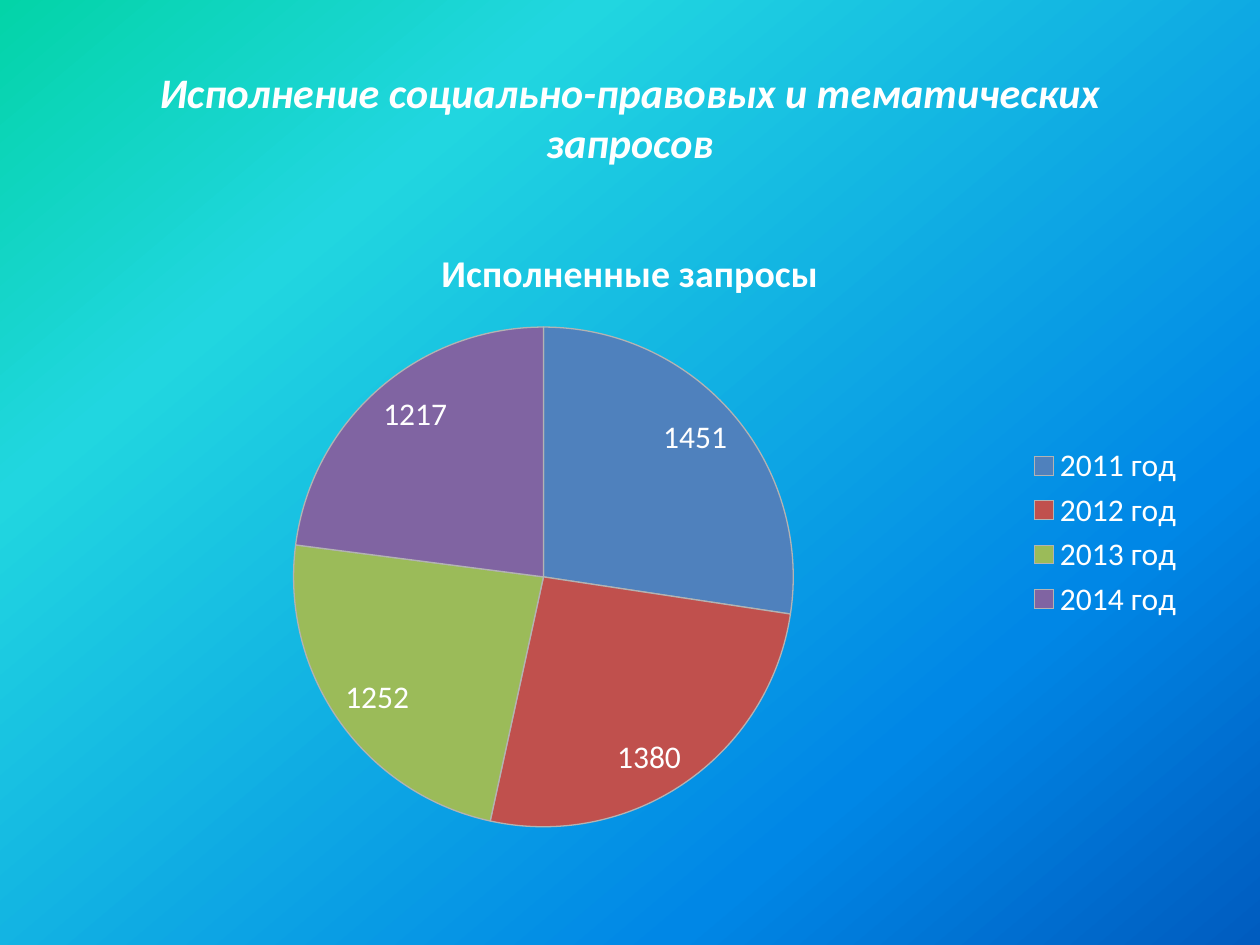
import pptx
import pptx.chart.data
import pptx.dml.color
import pptx.enum.chart
import pptx.enum.text
import pptx.oxml
import pptx.oxml.ns
import pptx.util
from pptx.util import Inches

COLORS = {
    "text": "FFFFFF",
    "outline": "B3B3B3",
    "2011 год": "4F81BD",
    "2012 год": "C0504D",
    "2013 год": "9BBB59",
    "2014 год": "8064A2",
}
BACKGROUND_STOPS = [(0, "03D4A8"), (25, "21D6E0"), (75, "0087E6"), (100, "005CBF")]
REQUESTS = {"2011 год": 1451, "2012 год": 1380, "2013 год": 1252, "2014 год": 1217}


class SlideBuilder:
    """Holds the slide style and adds each kind of element."""

    font_name = "Calibri"

    def __init__(self, slide):
        self.slide = slide

    def color(self, name):
        return pptx.dml.color.RGBColor.from_string(COLORS[name])

    def style_font(self, font, size, bold=False, italic=False):
        font.name = self.font_name
        font.size = pptx.util.Pt(size)
        font.bold = bold
        font.italic = italic
        font.color.rgb = self.color("text")

    def background(self, stops, angle):
        fill = self.slide.background.fill
        fill.gradient()
        fill.gradient_angle = 360 - angle
        stop_list = fill.gradient_stops[0]._gs.getparent()
        for old_stop in list(stop_list):
            stop_list.remove(old_stop)
        for percent, rgb in stops:
            stop_list.append(pptx.oxml.parse_xml(
                f'<a:gs {pptx.oxml.ns.nsdecls("a")} pos="{percent * 1000}">'
                f'<a:srgbClr val="{rgb}"/></a:gs>'))

    def heading(self, text, left, top, width, height):
        frame = self.slide.shapes.add_textbox(left, top, width, height).text_frame
        frame.word_wrap = True
        frame.vertical_anchor = pptx.enum.text.MSO_ANCHOR.MIDDLE
        paragraph = frame.paragraphs[0]
        paragraph.text = text
        paragraph.alignment = pptx.enum.text.PP_ALIGN.CENTER
        self.style_font(paragraph.font, 24, bold=True, italic=True)

    def pie(self, title, values, left, top, width, height):
        data = pptx.chart.data.CategoryChartData()
        data.categories = list(values)
        data.add_series(title, list(values.values()))
        chart = self.slide.shapes.add_chart(
            pptx.enum.chart.XL_CHART_TYPE.PIE, left, top, width, height, data).chart
        self.style_font(chart.font, 18)

        chart.has_title = True
        heading = chart.chart_title.text_frame.paragraphs[0]
        heading.text = title
        self.style_font(heading.font, 21.6, bold=True)

        chart.has_legend = True
        chart.legend.position = pptx.enum.chart.XL_LEGEND_POSITION.RIGHT
        chart.legend.include_in_layout = False
        self.style_font(chart.legend.font, 18)

        plot = chart.plots[0]
        plot.vary_by_categories = True
        labels = plot.series[0].data_labels
        labels.show_value = True
        labels.show_percentage = False
        labels.position = pptx.enum.chart.XL_LABEL_POSITION.INSIDE_END
        self.style_font(labels.font, 18)

        for index, year in enumerate(values):
            sector = plot.series[0].points[index].format
            sector.fill.solid()
            sector.fill.fore_color.rgb = self.color(year)
            sector.line.color.rgb = self.color("outline")
            sector.line.width = pptx.util.Pt(0.75)


def main():
    presentation = pptx.Presentation()
    presentation.slide_width = Inches(10)
    presentation.slide_height = Inches(7.5)
    builder = SlideBuilder(presentation.slides.add_slide(presentation.slide_layouts[6]))
    builder.background(BACKGROUND_STOPS, 50)
    builder.heading("Исполнение социально-правовых и тематических запросов",
                    Inches(0.5), Inches(0.3), Inches(9), Inches(1.25))
    builder.pie("Исполненные запросы", REQUESTS,
                Inches(0.5), Inches(1.75), Inches(9), Inches(4.95))
    presentation.save("out.pptx")


if __name__ == "__main__":
    main()
